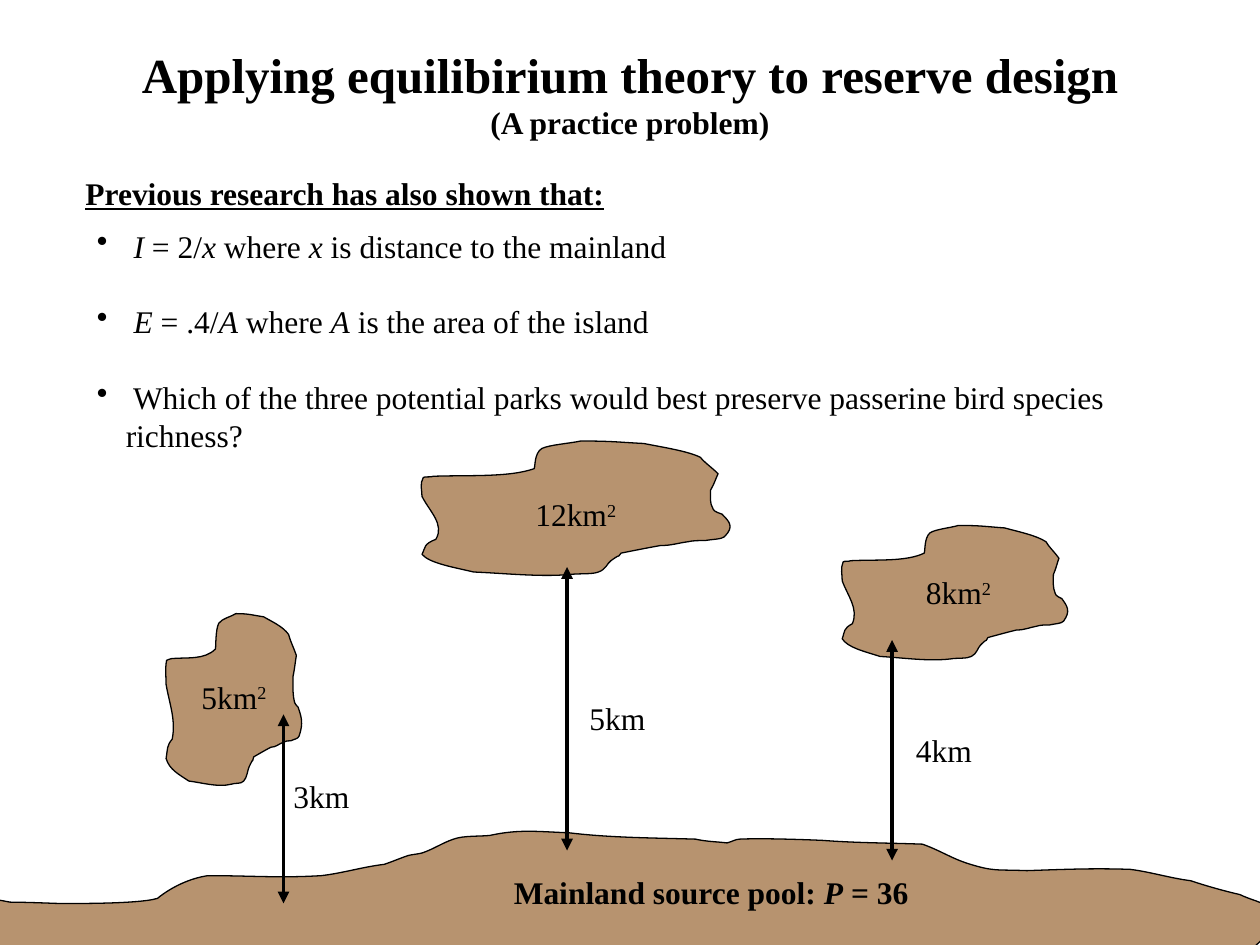
import dataclasses
import lxml.etree
import pptx
import pptx.dml.color
import pptx.enum.shapes
import pptx.enum.text
import pptx.oxml.ns
import pptx.util

Inches = pptx.util.Inches
FONT = "Times New Roman"
BLACK, EARTH = "000000", "996633"
BOLD = {"bold": True}
ITALIC = {"italic": True}
SUPER = {"baseline": "30000"}


@dataclasses.dataclass
class Island:
    left: float
    top: float
    width: float
    height: float
    area: str
    label_at: tuple  # left, top, width of the area label


@dataclasses.dataclass
class Distance:
    x: float
    top: float
    bottom: float
    text: str
    label_at: tuple


ISLANDS = [
    Island(1.31, 4.87, 1.1, 1.38, "5km", (1.5, 5.33, 0.73)),
    Island(3.33, 3.5, 2.5, 1.08, "12km", (4.15, 3.88, 0.85)),
    Island(6.67, 4.17, 1.83, 1.08, "8km", (7.25, 4.5, 0.73)),
]
DISTANCES = [
    Distance(4.5, 4.5, 6.75, "5km", (4.58, 5.5, 0.65)),
    Distance(7.08, 5.08, 6.83, "4km", (7.17, 5.75, 0.65)),
    Distance(2.25, 5.67, 7.17, "3km", (2.23, 6.12, 0.65)),
]

# Island coast: one start point, then Bezier curves, inside ISLAND_FRAME
ISLAND_FRAME = (3.33, 3.5, 2.5, 1.08)
ISLAND_START = (3.44, 3.78)
ISLAND_CURVES = [
    (3.72, 3.77, 4.04, 3.79, 4.24, 3.72), (4.25, 3.7, 4.24, 3.6, 4.3, 3.56),
    (4.36, 3.53, 4.52, 3.52, 4.61, 3.5), (4.86, 3.5, 4.91, 3.51, 5.11, 3.52),
    (5.26, 3.55, 5.46, 3.58, 5.56, 3.63), (5.59, 3.67, 5.65, 3.71, 5.7, 3.76),
    (5.68, 3.8, 5.67, 3.84, 5.64, 3.89), (5.64, 3.94, 5.63, 3.99, 5.66, 4.04),
    (5.66, 4.06, 5.73, 4.08, 5.73, 4.08), (5.79, 4.14, 5.83, 4.18, 5.75, 4.26),
    (5.73, 4.28, 5.65, 4.28, 5.6, 4.29), (5.55, 4.29, 5.5, 4.29, 5.46, 4.3),
    (5.38, 4.31, 5.33, 4.33, 5.24, 4.33), (5.13, 4.35, 5.03, 4.37, 4.93, 4.39),
    (4.88, 4.45, 4.96, 4.37, 4.85, 4.45), (4.82, 4.47, 4.81, 4.52, 4.75, 4.54),
    (4.7, 4.56, 4.6, 4.55, 4.52, 4.56), (4.28, 4.58, 4, 4.55, 3.76, 4.54),
    (3.59, 4.5, 3.41, 4.47, 3.35, 4.4), (3.38, 4.34, 3.36, 4.32, 3.46, 4.28),
    (3.53, 4.16, 3.41, 4.06, 3.35, 3.94), (3.35, 3.89, 3.33, 3.84, 3.36, 3.79),
    (3.37, 3.78, 3.42, 3.79, 3.44, 3.78),
]

# Mainland: curved coast on top, straight edges below the page
COAST_START = (-0.09, 7.13)
COAST_CURVES = [
    (-0.03, 7.14, 0.03, 7.15, 0.08, 7.16), (0.2, 7.16, 0.44, 7.17, 0.44, 7.17),
    (0.45, 7.17, 1.09, 7.18, 1.25, 7.13), (1.36, 7.04, 1.51, 6.97, 1.65, 6.95),
    (2, 6.95, 2.21, 6.97, 2.55, 6.95), (2.72, 6.93, 2.88, 6.88, 3.05, 6.86),
    (3.11, 6.84, 3.18, 6.81, 3.24, 6.79), (3.28, 6.78, 3.31, 6.78, 3.35, 6.77),
    (3.44, 6.74, 3.51, 6.69, 3.6, 6.66), (3.68, 6.63, 3.81, 6.64, 3.89, 6.63),
    (4.12, 6.58, 4.26, 6.6, 4.52, 6.61), (4.85, 6.65, 5.19, 6.65, 5.52, 6.66),
    (5.61, 6.68, 5.69, 6.68, 5.77, 6.69), (5.81, 6.68, 5.84, 6.66, 5.87, 6.66),
    (6.09, 6.65, 6.53, 6.67, 6.53, 6.67), (6.79, 6.69, 7.05, 6.69, 7.32, 6.7),
    (7.44, 6.74, 7.55, 6.81, 7.67, 6.85), (7.89, 6.92, 7.9, 6.9, 8.15, 6.91),
    (8.45, 6.9, 8.67, 6.89, 8.97, 6.9), (9.13, 6.92, 9.29, 6.97, 9.45, 6.99),
    (9.57, 7.03, 9.71, 7.07, 9.84, 7.1), (9.99, 7.17, 10.02, 7.14, 10.13, 7.27),
]
LAND_BASE = [(10.14, 7.32), (10.07, 7.41), (9.96, 7.51), (9.56, 7.6), (9.02, 7.73),
             (7.52, 7.72), (6.56, 7.87), (3.84, 7.85), (2.59, 7.73), (0.26, 7.72),
             (-0.21, 7.6), (-0.63, 7.35), (-0.67, 7.25), (-0.53, 7.24), (-0.15, 7.27)]

BULLETS = [
    [(" ", {}), ("I", ITALIC), (" = 2/", {}), ("x", ITALIC), (" where ", {}),
     ("x", ITALIC), (" is distance to the mainland", {})],
    [(" ", {}), ("E", ITALIC), (" = .4/", {}), ("A", ITALIC), (" where ", {}),
     ("A", ITALIC), (" is the area of the island", {})],
    [(" Which of the three potential parks would best preserve passerine bird "
      "species richness?", {})],
]


def color(value: str) -> pptx.dml.color.RGBColor:
    return pptx.dml.color.RGBColor.from_string(value)


def add_xml(parent, tag: str, **attributes):
    return lxml.etree.SubElement(parent, pptx.oxml.ns.qn(tag), attributes)


def add_spans(para, spans: list, size: float = 18) -> None:
    for text, style in spans:
        span = para.add_run()
        span.text = text
        span.font.color.rgb = color(BLACK)
        values = {"name": FONT, "size": pptx.util.Pt(size), **style}
        baseline = values.pop("baseline", None)
        for name, value in values.items():
            setattr(span.font, name, value)
        if baseline:
            span.font._element.set("baseline", baseline)


def add_label(page, at: tuple, spans: list) -> None:
    left, top, width = at
    box = page.shapes.add_textbox(Inches(left), Inches(top), Inches(width), Inches(0.4))
    box.text_frame.word_wrap = False
    add_spans(box.text_frame.paragraphs[0], spans)


def control_points(curves: list) -> list:
    return [curve[i:i + 2] for curve in curves for i in (0, 2, 4)]


def bend_lines(land, curve_count: int) -> None:
    """Join each three of the first line segments into one Bezier curve."""
    lines = list(land._element.spPr.iter(pptx.oxml.ns.qn("a:lnTo")))
    for first in range(0, 3 * curve_count, 3):
        curve = lxml.etree.Element(pptx.oxml.ns.qn("a:cubicBezTo"))
        lines[first].addprevious(curve)
        for line in lines[first:first + 3]:
            curve.append(line[0])
            line.getparent().remove(line)


def add_land(page, points: list, curve_count: int) -> None:
    corners = [(Inches(x), Inches(y)) for x, y in points]
    builder = page.shapes.build_freeform(*corners[0], scale=1.0)
    builder.add_line_segments(corners[1:], close=True)
    land = builder.convert_to_shape()
    bend_lines(land, curve_count)
    land.shadow.inherit = False
    land.fill.solid()
    land.fill.fore_color.rgb = color(EARTH)
    fill_color = next(land._element.spPr.iter(pptx.oxml.ns.qn("a:srgbClr")))
    add_xml(fill_color, "a:alpha", val="70000")
    land.line.color.rgb = color(BLACK)
    land.line.width = pptx.util.Pt(0.75)


def add_island(page, island: Island) -> None:
    left, top, width, height = ISLAND_FRAME
    points = [(island.left + (x - left) / width * island.width,
               island.top + (y - top) / height * island.height)
              for x, y in [ISLAND_START] + control_points(ISLAND_CURVES)]
    add_land(page, points, len(ISLAND_CURVES))


def add_distance(page, distance: Distance) -> None:
    x = Inches(distance.x)
    arrow = page.shapes.add_connector(pptx.enum.shapes.MSO_CONNECTOR.STRAIGHT,
                                      x, Inches(distance.top), x, Inches(distance.bottom))
    arrow.line.color.rgb = color(BLACK)
    arrow.line.width = pptx.util.Pt(2.25)
    for end in ("a:headEnd", "a:tailEnd"):
        add_xml(arrow.line._get_or_add_ln(), end, type="triangle")
    add_xml(arrow._element.spPr, "a:effectLst")


def add_title(page) -> None:
    title = page.shapes.title
    place = {"left": 0, "top": 0.3, "width": 10, "height": 0.87}
    for name, value in place.items():
        setattr(title, name, Inches(value))
    frame = title.text_frame
    frame.auto_size = pptx.enum.text.MSO_AUTO_SIZE.NONE
    frame.vertical_anchor = pptx.enum.text.MSO_ANCHOR.TOP
    lines = [("Applying equilibirium theory to reserve design", 28),
             ("(A practice problem)", 18)]
    for index, (text, size) in enumerate(lines):
        para = frame.add_paragraph() if index else frame.paragraphs[0]
        para.alignment = pptx.enum.text.PP_ALIGN.CENTER
        add_spans(para, [(text, BOLD)], size)


def add_bullets(page) -> None:
    box = page.shapes.add_textbox(Inches(0.67), Inches(1.75), Inches(9.06), Inches(1.6))
    frame = box.text_frame
    frame.word_wrap = True
    for index, spans in enumerate(BULLETS):
        para = frame.add_paragraph() if index else frame.paragraphs[0]
        para.space_before = pptx.util.Pt(21.6 if index else 0)
        properties = para._p.get_or_add_pPr()
        properties.set("marL", str(Inches(0.23)))
        properties.set("indent", str(-Inches(0.23)))
        add_xml(properties, "a:buChar", char="•")
        add_spans(para, spans)


def main() -> None:
    deck = pptx.Presentation()
    deck.slide_width, deck.slide_height = Inches(10), Inches(7.5)
    page = deck.slides.add_slide(deck.slide_layouts[5])
    add_title(page)
    # Islands and their areas
    for island in ISLANDS:
        add_island(page, island)
    for island in ISLANDS:
        add_label(page, island.label_at, [(island.area, {}), ("2", SUPER)])
    # Mainland
    coast = [COAST_START] + control_points(COAST_CURVES)
    add_land(page, coast + LAND_BASE, len(COAST_CURVES))
    add_label(page, (3.98, 6.88, 3.34), [("Mainland source pool: ", BOLD),
                                         ("P", {**BOLD, **ITALIC}), (" = 36", BOLD)])
    # Distances to the mainland
    for distance in DISTANCES:
        add_distance(page, distance)
    for distance in DISTANCES:
        add_label(page, distance.label_at, [(distance.text, {})])
    # Known rules and the question
    add_bullets(page)
    add_label(page, (0.58, 1.33, 4.33),
              [("Previous research has also shown that:", {**BOLD, "underline": True})])
    deck.save("out.pptx")


if __name__ == "__main__":
    main()
